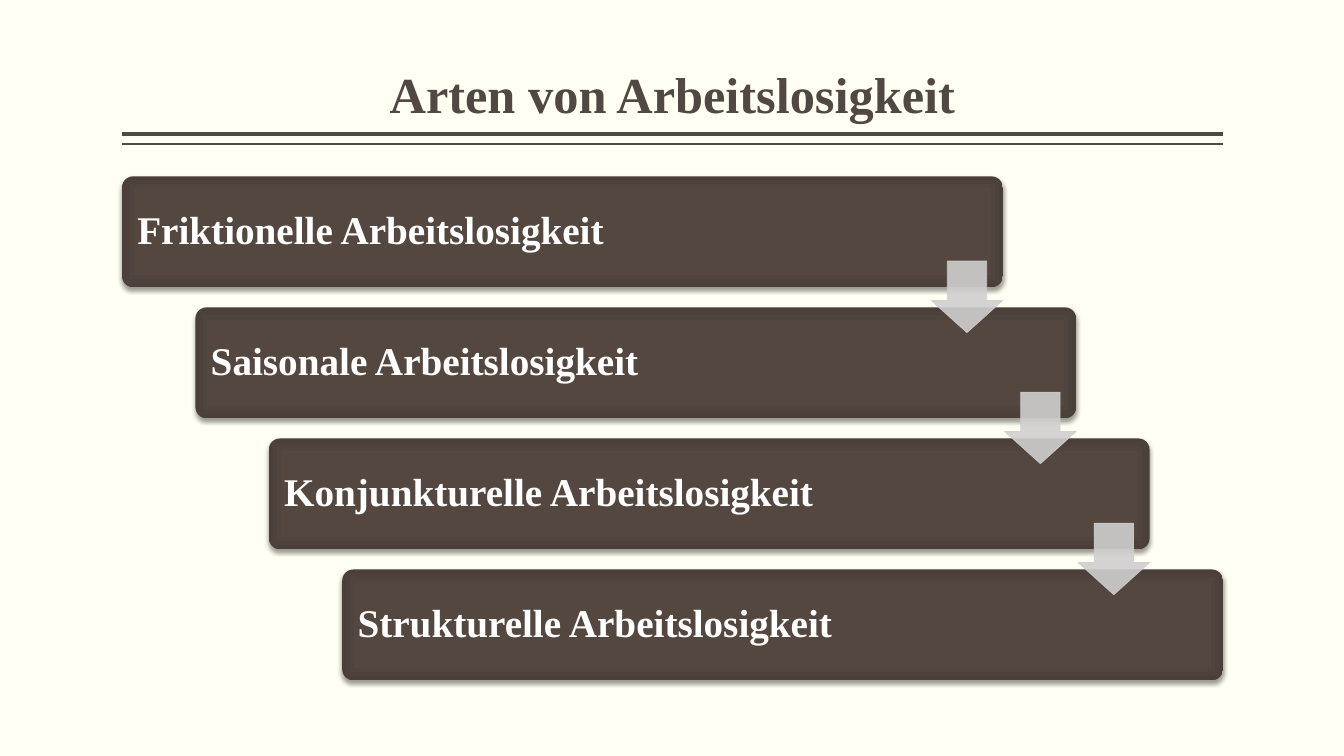
from lxml import etree
from pptx import Presentation
from pptx.dml.color import RGBColor
from pptx.enum.shapes import MSO_CONNECTOR as LINE, MSO_SHAPE as SHAPE
from pptx.enum.text import MSO_ANCHOR as ANCHOR, MSO_AUTO_SIZE as FIT, PP_ALIGN as ALIGN
from pptx.oxml import parse_xml
from pptx.oxml.ns import qn
from pptx.util import Inches, Pt

FONT = "Times New Roman"
CREAM = RGBColor(0xFF, 0xFF, 0xF3)
BROWN = RGBColor(0x51, 0x48, 0x43)
WHITE = RGBColor(0xFF, 0xFF, 0xFF)
GREY = RGBColor(0xD0, 0xCF, 0xCF)
CORE = RGBColor(0x54, 0x47, 0x40)
MID = RGBColor(0x53, 0x47, 0x40)
EDGE = RGBColor(0x4A, 0x3F, 0x39)

NS = 'xmlns:a="http://schemas.openxmlformats.org/drawingml/2006/main"'
STOPS = "".join(
    f'<a:gs pos="{pos}000"><a:srgbClr val="{color}"/></a:gs>'
    for pos, color in ((0, CORE), (71, MID), (100, EDGE)))
GLOW = f"""<a:gradFill {NS}><a:gsLst>{STOPS}</a:gsLst><a:path path="rect">
<a:fillToRect l="50000" t="50000" r="50000" b="50000"/></a:path></a:gradFill>"""
SHADOW = f"""<a:effectLst {NS}><a:outerShdw blurRad="{Pt(3.1)}" dist="{Pt(2)}"
dir="5400000" rotWithShape="0"><a:srgbClr val="000000"><a:alpha val="38000"/>
</a:srgbClr></a:outerShdw></a:effectLst>"""

KINDS = ["Friktionelle Arbeitslosigkeit", "Saisonale Arbeitslosigkeit",
         "Konjunkturelle Arbeitslosigkeit", "Strukturelle Arbeitslosigkeit"]


def write(frame, text, size, color, align):
    frame.word_wrap = True
    para = frame.paragraphs[0]
    para.alignment = align
    para.line_spacing = 0.9
    run = para.add_run()
    run.text = text
    font = run.font
    font.name, font.size, font.bold = FONT, Pt(size), True
    font.color.rgb = color


def add_title(slide, text, left, top, width, height):
    """Fill the title placeholder and draw the double rule under it."""
    title = slide.shapes.title
    title.left, title.top = Inches(left), Inches(top)
    title.width, title.height = Inches(width), Inches(height)
    frame = title.text_frame
    frame.auto_size = FIT.NONE
    frame.vertical_anchor = ANCHOR.BOTTOM
    frame.margin_left = frame.margin_right = 0
    frame.margin_top = frame.margin_bottom = Inches(0.05)
    write(frame, text, 36, BROWN, ALIGN.CENTER)
    for gap, weight in ((0.05, 3), (0.15, 1)):
        y = Inches(top + height + gap)
        rule = slide.shapes.add_connector(
            LINE.STRAIGHT, Inches(left), y, Inches(left + width), y)
        rule.line.color.rgb = BROWN
        rule.line.width = Pt(weight)
        etree.SubElement(rule._element.spPr, qn("a:effectLst"))


def add_bar(slide, text, left, top, width, height):
    bar = slide.shapes.add_shape(SHAPE.ROUNDED_RECTANGLE, Inches(left),
                                 Inches(top), Inches(width), Inches(height))
    bar.adjustments[0] = 0.1
    bar.line.fill.background()
    props = bar._element.spPr
    props.insert(2, parse_xml(GLOW))
    props.append(parse_xml(SHADOW))
    frame = bar.text_frame
    frame.vertical_anchor = ANCHOR.MIDDLE
    frame.margin_left = frame.margin_right = Inches(0.12)
    frame.margin_top = frame.margin_bottom = Inches(0.12)
    write(frame, text, 28, WHITE, ALIGN.LEFT)


def add_arrow(slide, left, top, size):
    arrow = slide.shapes.add_shape(SHAPE.DOWN_ARROW, Inches(left), Inches(top),
                                   Inches(size), Inches(size))
    arrow.adjustments[0] = 0.55
    arrow.adjustments[1] = 0.45
    arrow.shadow.inherit = False
    arrow.fill.solid()
    arrow.fill.fore_color.rgb = GREY
    arrow.line.color.rgb = GREY
    arrow.line.width = Pt(0.5)
    for color in arrow._element.spPr.iter(qn("a:srgbClr")):
        etree.SubElement(color, qn("a:alpha")).set("val", "90000")


def add_stairs(slide, kinds, left, top, width, height):
    """Step the bars evenly from top left to bottom right, arrows between."""
    wide, high, size = width * 0.8, height * 0.22, 0.71
    steps = len(kinds) - 1
    across, down = (width - wide) / steps, (height - high) / steps
    spots = [(left + i * across, top + i * down) for i in range(len(kinds))]
    for text, (x, y) in zip(kinds, spots):
        add_bar(slide, text, x, y, wide, high)
    for x, y in spots[:-1]:
        add_arrow(slide, x + wide - size, y + 0.84, size)


def main():
    deck = Presentation()
    deck.slide_width, deck.slide_height = Inches(13.33), Inches(7.5)
    slide = deck.slides.add_slide(deck.slide_layouts[5])
    back = slide.background.fill
    back.solid()
    back.fore_color.rgb = CREAM
    add_title(slide, "Arten von Arbeitslosigkeit", 1.21, 0.08, 10.92, 1.2)
    add_stairs(slide, KINDS, 1.21, 1.75, 10.92, 5)
    deck.save("out.pptx")


if __name__ == "__main__":
    main()
